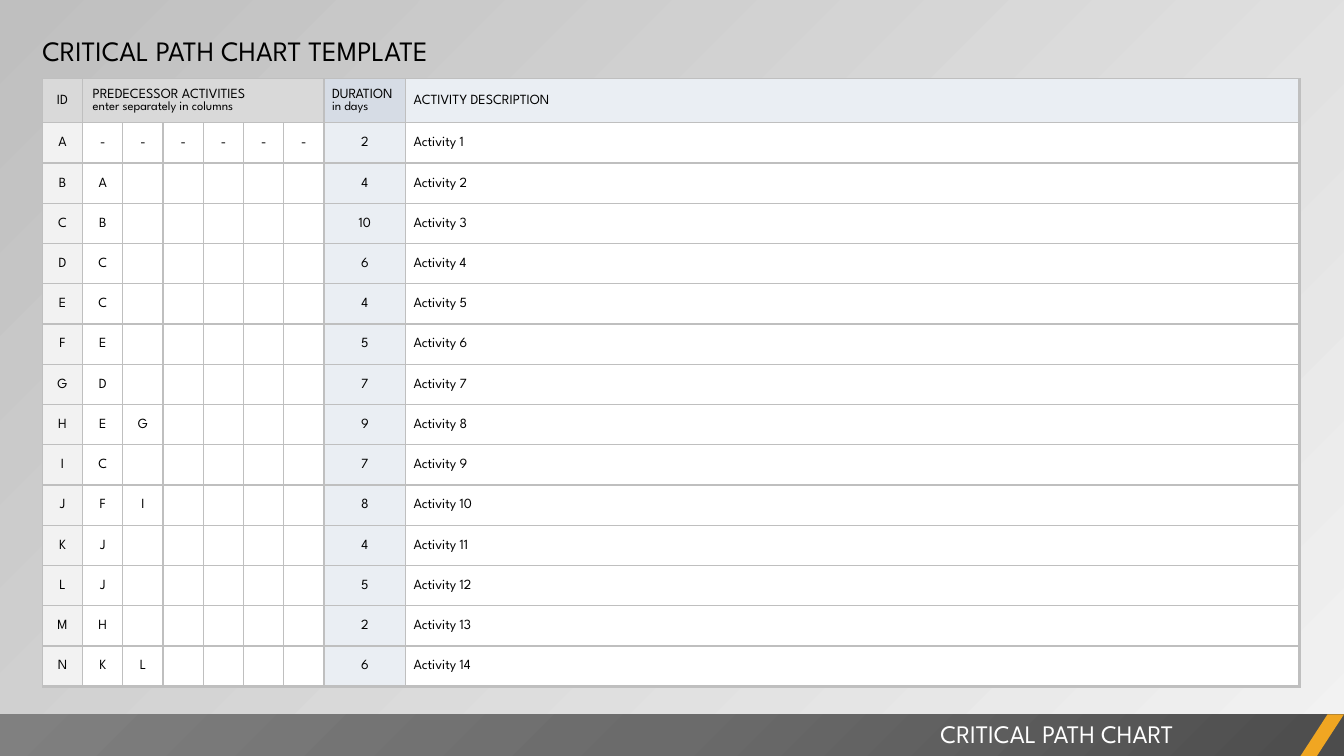
from copy import deepcopy
from lxml.etree import SubElement
from pptx import Presentation
from pptx.dml.color import RGBColor
from pptx.enum.shapes import MSO_SHAPE
from pptx.enum.text import MSO_ANCHOR, MSO_AUTO_SIZE, PP_ALIGN
from pptx.oxml import parse_xml
from pptx.oxml.ns import nsdecls, qn
from pptx.util import Pt

FONT = "League Spartan"
BLACK = RGBColor(0x00, 0x00, 0x00)
WHITE = RGBColor(0xFF, 0xFF, 0xFF)
PALE = RGBColor(0xF2, 0xF2, 0xF2)
SILVER = RGBColor(0xBF, 0xBF, 0xBF)
GREY = RGBColor(0xD9, 0xD9, 0xD9)
STEEL = RGBColor(0xD6, 0xDC, 0xE5)
MIST = RGBColor(0xEA, 0xEE, 0xF3)
AMBER = RGBColor(0xF0, 0xA6, 0x22)
DARK = RGBColor(0x4C, 0x4C, 0x4C)
MID = RGBColor(0x6B, 0x6B, 0x6B)
LIGHT = RGBColor(0x80, 0x80, 0x80)

# ID, predecessors, days
TASKS = [
    ("A", "------", 2), ("B", "A", 4), ("C", "B", 10), ("D", "C", 6), ("E", "C", 4),
    ("F", "E", 5), ("G", "D", 7), ("H", "EG", 9), ("I", "C", 7), ("J", "FI", 8),
    ("K", "J", 4), ("L", "J", 5), ("M", "H", 2), ("N", "KL", 6),
]
SLOTS = 6
DAYS, DESC = SLOTS + 1, SLOTS + 2


def write(para, text, size, color=BLACK):
    run = para.add_run()
    run.text = text
    run.font.name = FONT
    run.font.size = Pt(size)
    run.font.color.rgb = color
    return run


def dress(cell, fill, right, bottom):
    """Fill a cell and draw its borders, with given right and bottom widths."""
    cell.fill.solid()
    cell.fill.fore_color.rgb = fill
    cell.vertical_anchor = MSO_ANCHOR.MIDDLE
    cell.margin_left = cell.margin_right = cell.margin_top = Pt(0.72)
    cell.margin_bottom = 0
    props = cell._tc.get_or_add_tcPr()
    sides = [("lnL", 1), ("lnR", right), ("lnT", 1), ("lnB", bottom)]
    for i, (side, width) in enumerate(sides):
        props.insert(i, parse_xml(
            f'<a:{side} {nsdecls("a")} w="{Pt(width)}"><a:solidFill>'
            f'<a:srgbClr val="{SILVER}"/></a:solidFill></a:{side}>'))


prs = Presentation()
prs.slide_width, prs.slide_height = Pt(960), Pt(540)
slide = prs.slides.add_slide(prs.slide_layouts[5])

# Background
back = slide.background.fill
back.gradient()
back.gradient_angle = 135
for stop, color in zip(back.gradient_stops, (PALE, SILVER)):
    stop.color.rgb = color
tint = slide.background._cSld.find(".//" + qn("a:srgbClr"))
SubElement(tint, qn("a:alpha"), val="40000")

# Footer
band = slide.shapes.add_shape(MSO_SHAPE.RECTANGLE, 0, Pt(510.25), Pt(960), Pt(30))
slash = slide.shapes.add_shape(
    MSO_SHAPE.PARALLELOGRAM, Pt(928.8), Pt(510.25), Pt(31.2), Pt(30))
slash.adjustments[0] = 0.65
for shape in (band, slash):
    shape.shadow.inherit = False
    shape.line.fill.background()
slash.fill.solid()
slash.fill.fore_color.rgb = AMBER
stops = "".join(
    f'<a:gs pos="{pos}"><a:srgbClr val="{color}"/></a:gs>'
    for pos, color in ((0, DARK), (50000, MID), (100000, LIGHT)))
band._element.spPr.find(qn("a:prstGeom")).addnext(parse_xml(
    f'<a:gradFill {nsdecls("a")} rotWithShape="1"><a:gsLst>{stops}</a:gsLst>'
    '<a:path path="circle"><a:fillToRect l="100000" t="100000"/></a:path></a:gradFill>'))

label = slide.shapes.add_textbox(Pt(125.3), Pt(509.8), Pt(720), Pt(28.8)).text_frame
label.word_wrap = True
label.auto_size = MSO_AUTO_SIZE.SHAPE_TO_FIT_TEXT
label.paragraphs[0].alignment = PP_ALIGN.RIGHT
write(label.paragraphs[0], "CRITICAL PATH CHART", 18, WHITE)

# Title
title = slide.shapes.title
title.left, title.top, title.width, title.height = Pt(30.25), Pt(20.2), Pt(341.3), Pt(31.7)
head = title.text_frame
head.word_wrap = True
head.auto_size = MSO_AUTO_SIZE.SHAPE_TO_FIT_TEXT
head.vertical_anchor = MSO_ANCHOR.TOP
head.margin_left = 0
head.paragraphs[0].alignment = PP_ALIGN.LEFT
write(head.paragraphs[0], "CRITICAL PATH CHART TEMPLATE", 20)

# Activity table
table = slide.shapes.add_table(
    len(TASKS) + 1, DESC + 1, Pt(30.25), Pt(56.2), Pt(898.2), Pt(434)).table
table.first_row = table.horz_banding = False
for c, column in enumerate(table.columns):
    column.width = Pt({DAYS: 58.3, DESC: 638.65}.get(c, 28.75))
for r, row in enumerate(table.rows):
    row.height = Pt(28.75 if r else 31.5)

heads = [GREY] * DAYS + [STEEL, MIST]
fills = [PALE] + [WHITE] * SLOTS + [MIST, WHITE]
for r in range(len(TASKS) + 1):
    for c in range(DESC + 1):
        dress(table.cell(r, c), (fills if r else heads)[c],
              2.25 if c == DESC else 1, 2.25 if r == len(TASKS) else 1)
    table.cell(r, DESC).margin_left = Pt(5.75)

group = table.cell(0, 1)
group.merge(table.cell(0, SLOTS))
group.margin_left = group.margin_right = Pt(7.2)
group.margin_top = group.margin_bottom = Pt(3.6)
table.cell(0, DAYS).margin_left = Pt(5.75)

for c, text, note in (
        (0, "ID", ""),
        (1, "PREDECESSOR ACTIVITIES", "enter separately in columns"),
        (DAYS, "DURATION", "in days"),
        (DESC, "ACTIVITY DESCRIPTION", "")):
    para = table.cell(0, c).text_frame.paragraphs[0]
    para.alignment = PP_ALIGN.LEFT if c else PP_ALIGN.CENTER
    run = write(para, text, 10)
    if note:
        para._p.add_br().append(deepcopy(run._r.rPr))
        write(para, note, 9)

for r, (name, needs, days) in enumerate(TASKS, 1):
    texts = [name, *needs.ljust(SLOTS), str(days), f"Activity {r}"]
    for c, text in enumerate(texts):
        para = table.cell(r, c).text_frame.paragraphs[0]
        para.alignment = PP_ALIGN.LEFT if c == DESC else PP_ALIGN.CENTER
        if text.strip():
            write(para, text, 10)

prs.save("out.pptx")
